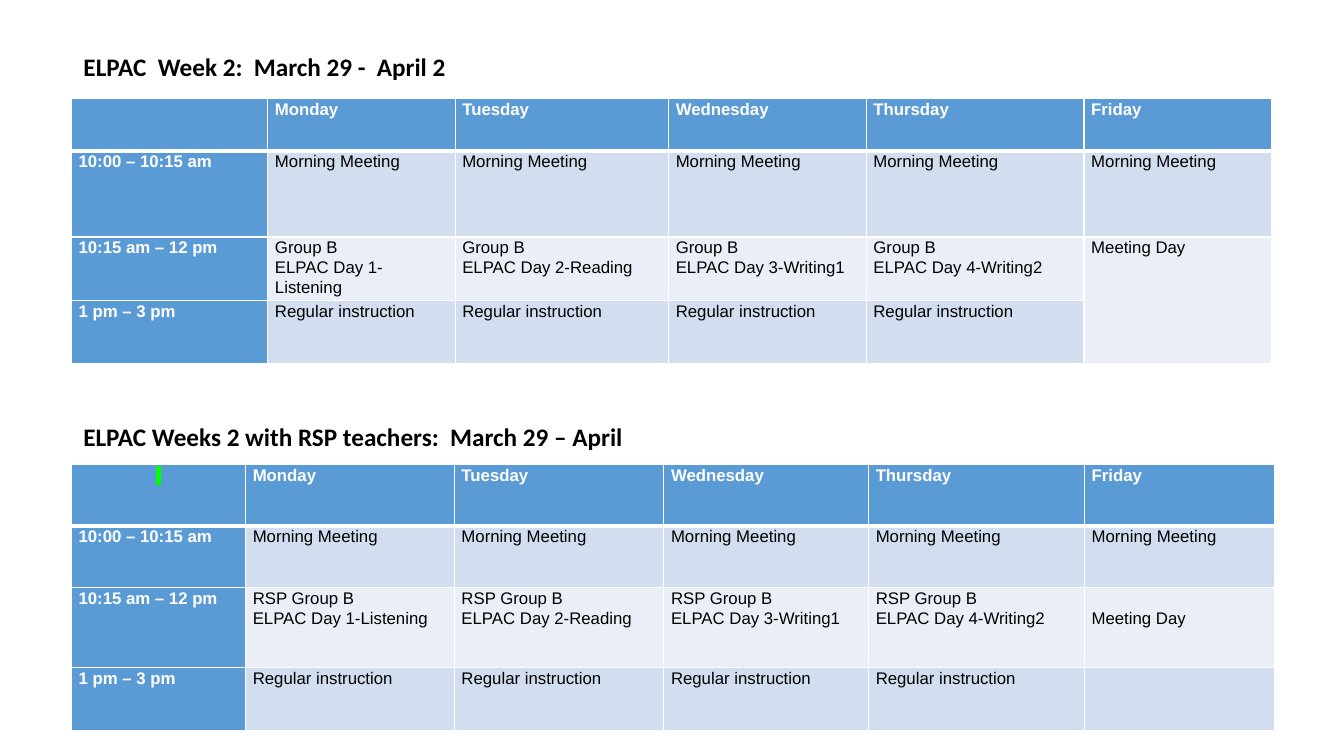
from lxml.etree import SubElement
from pptx import Presentation
from pptx.dml.color import RGBColor
from pptx.enum.text import MSO_ANCHOR, MSO_AUTO_SIZE, PP_ALIGN
from pptx.oxml import parse_xml
from pptx.oxml.ns import nsdecls, qn
from pptx.util import Cm, Pt

BLUE = RGBColor(0x5B, 0x9B, 0xD5)
MID = RGBColor(0xD2, 0xDE, 0xEF)
PALE = RGBColor(0xEA, 0xEF, 0xF7)
WHITE = RGBColor(0xFF, 0xFF, 0xFF)
BLACK = RGBColor(0x00, 0x00, 0x00)
GREEN = RGBColor(0x00, 0xFF, 0x00)

DAYS = ["Monday", "Tuesday", "Wednesday", "Thursday", "Friday"]
TESTS = ["Listening", "Reading", "Writing1", "Writing2"]


def plan(group):
    tests = [f"{group}\nELPAC Day {day}-{test}" for day, test in enumerate(TESTS, 1)]
    return [
        [""] + DAYS,
        ["10:00 – 10:15 am"] + ["Morning Meeting"] * len(DAYS),
        ["10:15 am – 12 pm"] + tests + ["Meeting Day"],
        ["1 pm – 3 pm"] + ["Regular instruction"] * len(TESTS) + [""],
    ]


def style(frame, font, size, color, bold):
    for line in frame.paragraphs:
        for run in line.runs:
            run.font.name = font
            run.font.size = Pt(size)
            run.font.bold = bold
            run.font.color.rgb = color


def edge(cell, row):
    widths = {"L": 1, "R": 1, "T": 3 if row == 1 else 1, "B": 3 if row == 0 else 1}
    props = cell._tc.get_or_add_tcPr()
    for spot, (side, width) in enumerate(widths.items()):
        line = parse_xml(
            f'<a:ln{side} {nsdecls("a")} w="{Pt(width)}"><a:solidFill>'
            f'<a:srgbClr val="{WHITE}"/></a:solidFill></a:ln{side}>'
        )
        props.insert(spot, line)


def fill_cell(cell, text, row, col):
    head = row == 0 or col == 0
    cell.margin_left = cell.margin_right = Cm(0.18)
    cell.margin_top = cell.margin_bottom = 0
    cell.fill.solid()
    cell.fill.fore_color.rgb = BLUE if head else MID if row % 2 else PALE
    edge(cell, row)
    cell.text_frame.text = text
    for line in cell.text_frame.paragraphs:
        line.line_spacing = 1.07
    style(cell.text_frame, "Arial", 12, WHITE if head else BLACK, head)


def add_grid(slide, left, top, cols, rows, group):
    shape = slide.shapes.add_table(
        len(rows), len(cols), Cm(left), Cm(top), Cm(sum(cols)), Cm(sum(rows))
    )
    table = shape.table
    table.first_col = True
    for col, width in enumerate(cols):
        table.columns[col].width = Cm(width)
    for row, texts in enumerate(plan(group)):
        table.rows[row].height = Cm(rows[row])
        for col, text in enumerate(texts):
            fill_cell(table.cell(row, col), text, row, col)
    return table


def set_head(shape, left, top, width, text):
    shape.left, shape.top = Cm(left), Cm(top)
    shape.width, shape.height = Cm(width), Cm(1.02)
    frame = shape.text_frame
    frame.text = text
    frame.word_wrap = True
    frame.auto_size = MSO_AUTO_SIZE.NONE
    frame.vertical_anchor = MSO_ANCHOR.MIDDLE
    frame.paragraphs[0].alignment = PP_ALIGN.LEFT
    style(frame, "Calibri", 18, BLACK, True)


def mark(cell):
    line = cell.text_frame.paragraphs[0]
    line.alignment = PP_ALIGN.CENTER
    run = line.add_run()
    run.text = " "
    style(cell.text_frame, "Arial", 12, WHITE, True)
    props = run.font._element
    light = SubElement(props, qn("a:highlight"))
    SubElement(light, qn("a:srgbClr"), val=str(GREEN))
    props.find(qn("a:solidFill")).addnext(light)


def add_week(slide, left, top):
    set_head(slide.shapes.title, left + 0.05, top - 1.32, 12.4,
             "ELPAC  Week 2:  March 29 -  April 2")
    cols = [4.95, 4.72, 5.38, 4.98, 5.49, 4.72]
    table = add_grid(slide, left, top, cols, [1.32, 2.16, 1.6, 1.6], "Group B")
    table.cell(2, 5).merge(table.cell(3, 5))


def add_rsp(slide, left, top):
    box = slide.shapes.add_textbox(0, 0, 0, 0)
    set_head(box, left + 0.05, top - 1.22, 14.38,
             "ELPAC Weeks 2 with RSP teachers:  March 29 – April")
    cols = [4.39, 5.26, 5.28, 5.16, 5.44, 4.78]
    table = add_grid(slide, left, top, cols, [1.55, 1.55, 2.01, 1.6], "RSP Group B")
    table.cell(2, 5).margin_top = Cm(0.5)
    mark(table.cell(0, 0))


def main():
    deck = Presentation()
    deck.slide_width, deck.slide_height = Cm(33.87), Cm(19.05)
    slide = deck.slides.add_slide(deck.slide_layouts[5])
    add_week(slide, 1.8, 2.49)
    add_rsp(slide, 1.8, 11.71)
    deck.save("out.pptx")


if __name__ == "__main__":
    main()
